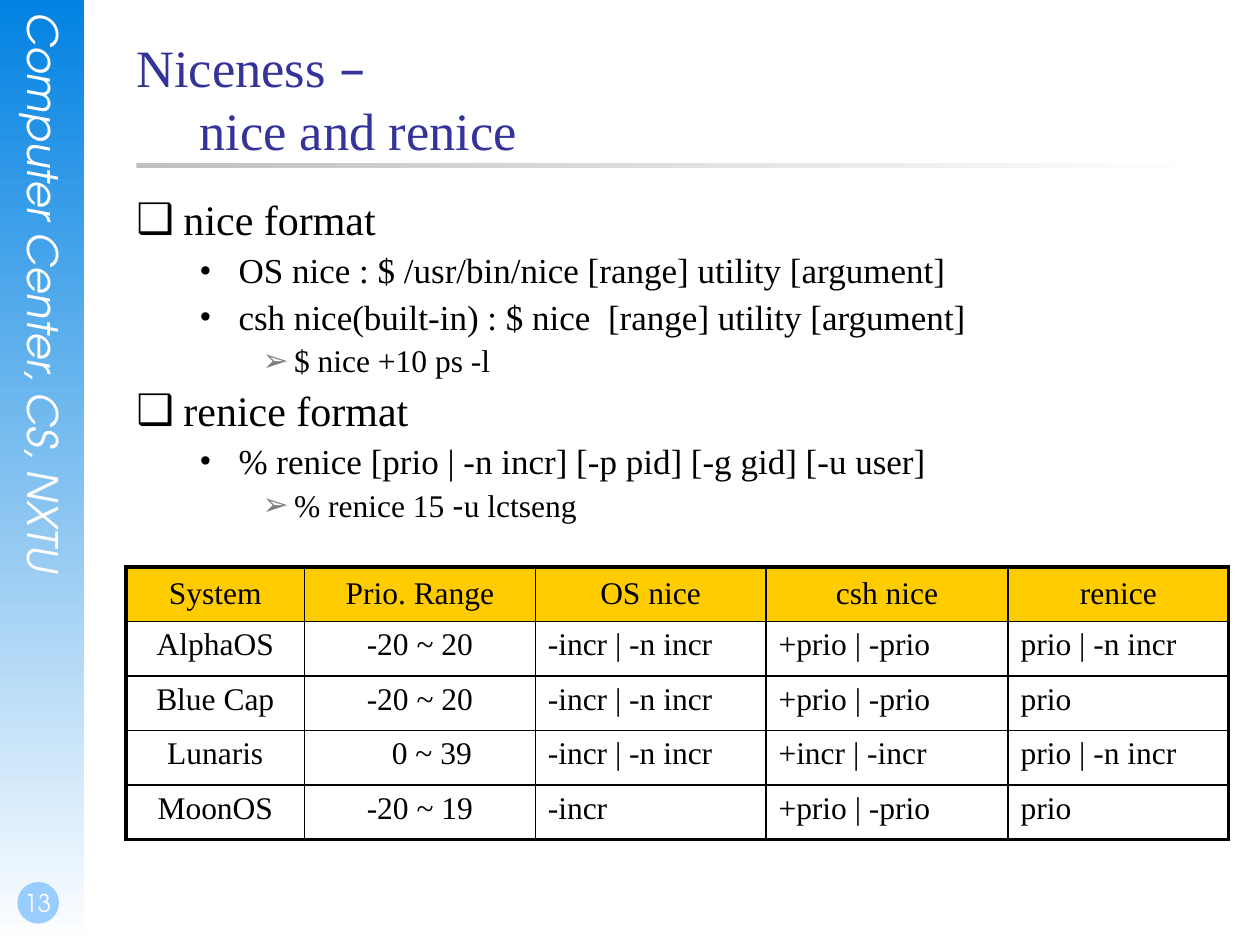
from lxml import etree
from pptx import Presentation
from pptx.dml.color import RGBColor
from pptx.enum.shapes import MSO_SHAPE
from pptx.enum.text import MSO_ANCHOR, PP_ALIGN
from pptx.oxml.ns import qn
from pptx.util import Cm, Pt

RECT, OVAL = MSO_SHAPE.RECTANGLE, MSO_SHAPE.OVAL
TOP, MIDDLE, BOTTOM = MSO_ANCHOR.TOP, MSO_ANCHOR.MIDDLE, MSO_ANCHOR.BOTTOM
LEFT, CENTER = PP_ALIGN.LEFT, PP_ALIGN.CENTER

WHITE = RGBColor(0xFF, 0xFF, 0xFF)
BLACK = RGBColor(0, 0, 0)
BLUE = RGBColor(0x02, 0x82, 0xE2)
SKY = RGBColor(0x99, 0xCC, 0xFF)
NAVY = RGBColor(0x33, 0x33, 0x99)
SILVER = RGBColor(0xC0, 0xC0, 0xC0)
GRAY = RGBColor(0x80, 0x80, 0x80)
GOLD = RGBColor(0xFF, 0xCC, 0x00)

SERIF, SANS, ROUND = "Times New Roman", "DejaVu Sans", "TeX Gyre Adventor"

# level: size, text indent (cm), hang (cm), bullet, bullet font, bullet colour
LEVELS = [
    (24, 0.95, 0.95, "❑", SANS, BLACK),
    (20, 2.06, 0.79, "•", SERIF, BLACK),
    (18, 3.18, 0.64, "➢", SANS, GRAY),
]
POINTS = [
    (0, ["nice format"]),
    (1, ["OS nice : $ /usr/bin/nice [range] utility [argument]"]),
    (1, ["csh nice(built-in) : $ nice  [range] utility [argument]"]),
    (2, ["$ nice +10 ps -l"]),
    (0, ["renice format"]),
    (1, ["% renice [prio | -n incr] [-p pid] [-g gid] [-u user]"]),
    (2, ["% renice 15 ", "-", "u lctseng"]),
]
WIDTHS = [3.6, 4.65, 4.65, 4.88, 4.45]
ROWS = [
    ["System", "Prio. Range", "OS nice", "csh nice", "renice"],
    ["AlphaOS", "-20 ~ 20", "-incr | -n incr", "+prio | -prio", "prio | -n incr"],
    ["Blue Cap", "-20 ~ 20", "-incr | -n incr", "+prio | -prio", "prio"],
    ["Lunaris", "0 ~ 39", "-incr | -n incr", "+incr | -incr", "prio | -n incr"],
    ["MoonOS", "-20 ~ 19", "-incr", "+prio | -prio", "prio"],
]


def add_run(par, text, size, color, font=SERIF):
    run = par.add_run()
    run.text = text
    run.font.size, run.font.name = Pt(size), font
    run.font.color.rgb = color
    return run


def add_node(parent, tag, **attrs):
    return etree.SubElement(parent, qn(tag), attrs)


def set_gap(par):
    """Put a quarter of a line above the paragraph."""
    gap = add_node(par._p.get_or_add_pPr(), "a:spcBef")
    add_node(gap, "a:spcPct", val="25000")


def add_frame(slide, x, y, w, h, wrap=True):
    """Add a text box without margins and return its text frame."""
    frame = slide.shapes.add_textbox(Cm(x), Cm(y), Cm(w), Cm(h)).text_frame
    frame.word_wrap = wrap
    frame.margin_left = frame.margin_right = 0
    frame.margin_top = frame.margin_bottom = 0
    return frame


def add_block(slide, kind, x, y, w, h, color, angle=None):
    """Add a plain shape; an angle makes it fade to white."""
    block = slide.shapes.add_shape(kind, Cm(x), Cm(y), Cm(w), Cm(h))
    block.shadow.inherit = False
    block.line.fill.background()
    if angle is None:
        block.fill.solid()
        block.fill.fore_color.rgb = color
        return
    block.fill.gradient()
    block.fill.gradient_angle = angle
    for stop, shade in zip(block.fill.gradient_stops, (color, WHITE)):
        stop.color.rgb = shade


def add_side(slide, x, y, w, h):
    add_block(slide, RECT, x, y, w, h, BLUE, 270)
    frame = add_frame(slide, x + 0.38, y + 0.25, 1.02, 12.98, wrap=False)
    frame._txBody.bodyPr.set("vert", "eaVert")
    label = add_run(frame.paragraphs[0], "Computer Center, CS, NXTU", 24, WHITE, ROUND)
    label.font.italic = True
    add_block(slide, OVAL, x + 0.35, y + h - 1.27, 0.84, 0.84, SKY)
    frame = add_frame(slide, x, y + h - 1.7, 1.47, 1.27)
    frame.vertical_anchor = BOTTOM
    frame.margin_left, frame.margin_bottom = Cm(0.05), Cm(0.13)
    frame.paragraphs[0].alignment = CENTER
    add_run(frame.paragraphs[0], "13", 14, WHITE, ROUND)


def add_title(slide, x, y, w, h):
    add_block(slide, RECT, x, y + 2.57, w, 0.1, SILVER, 0)
    par = add_frame(slide, x, y, w, h).paragraphs[0]
    add_run(par, "Niceness ", 30, NAVY)
    add_run(par, "–", 30, NAVY, SANS)
    par.add_line_break()
    add_run(par, "\tnice and renice", 30, NAVY)


def add_points(slide, x, y, w, h):
    frame = add_frame(slide, x, y, w, h)
    for i, (level, parts) in enumerate(POINTS):
        par = frame.add_paragraph() if i else frame.paragraphs[0]
        size, indent, hang, mark, face, color = LEVELS[level]
        par.level, par.line_spacing = level, 0.9
        set_gap(par)
        props = par._p.get_or_add_pPr()
        props.set("marL", str(Cm(indent)))
        props.set("indent", str(-Cm(hang)))
        add_node(add_node(props, "a:buClr"), "a:srgbClr", val=str(color))
        add_node(props, "a:buFont", typeface=face)
        add_node(props, "a:buChar", char=mark)
        for part in parts:
            add_run(par, part, size, BLACK, SANS if part == "-" else SERIF)


def set_edges(cell, thick):
    """Draw the four borders, heavier on the named sides."""
    props = cell._tc.get_or_add_tcPr()
    for i, side in enumerate("LRTB"):
        width = Pt(2.25 if side in thick else 1)
        line = etree.Element(qn("a:ln" + side), w=str(width))
        add_node(add_node(line, "a:solidFill"), "a:srgbClr", val=str(BLACK))
        props.insert(i, line)


def add_grid(slide, x, y, w, h):
    shape = slide.shapes.add_table(len(ROWS), len(WIDTHS), Cm(x), Cm(y), Cm(w), Cm(h))
    table = shape.table
    table.first_row = table.horz_banding = False
    for col, width in zip(table.columns, WIDTHS):
        col.width = Cm(width)
    last, end = len(ROWS) - 1, len(WIDTHS) - 1
    for r, row in enumerate(ROWS):
        table.rows[r].height = Cm(h / len(ROWS))
        for c, text in enumerate(row):
            cell = table.cell(r, c)
            if r == 0:
                cell.fill.solid()
                cell.fill.fore_color.rgb = GOLD
            else:
                cell.fill.background()
            cell.vertical_anchor = MIDDLE if r == 0 else TOP
            par = cell.text_frame.paragraphs[0]
            par.alignment = CENTER if r == 0 or c < 2 else LEFT
            set_gap(par)
            if text.startswith("0"):
                par._p.get_or_add_pPr().set("marL", str(Cm(0.48)))
            add_run(par, text, 18, BLACK)
            sides = {"L": c == 0, "R": c == end, "T": r == 0, "B": r == last}
            set_edges(cell, [side for side in sides if sides[side]])


def main():
    deck = Presentation()
    deck.slide_width, deck.slide_height = Cm(25.4), Cm(19.05)
    slide = deck.slides.add_slide(deck.slide_layouts[6])
    add_side(slide, 0, 0, 1.7, 19.05)
    add_title(slide, 2.75, 0.71, 21.59, 3.18)
    add_points(slide, 2.75, 4.02, 20.75, 8.25)
    add_grid(slide, 2.54, 11.43, sum(WIDTHS), 5.49)
    deck.save("out.pptx")


if __name__ == "__main__":
    main()
